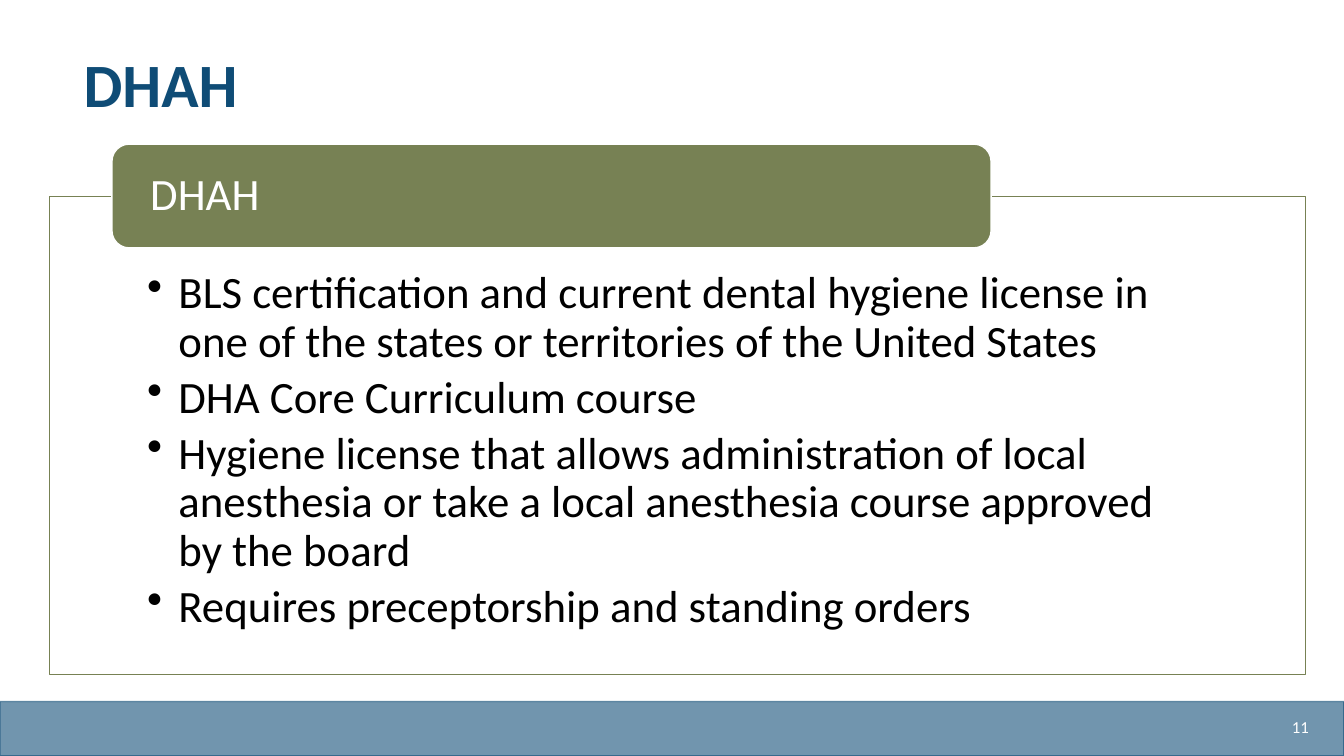
import pptx
import pptx.util
import pptx.dml.color
import pptx.enum.shapes
import pptx.enum.text
import pptx.oxml
import pptx.oxml.ns
from dataclasses import dataclass
from pptx.util import Inches

SHAPES = pptx.enum.shapes.MSO_SHAPE
ALIGN = pptx.enum.text.PP_ALIGN
ANCHOR = pptx.enum.text.MSO_ANCHOR


@dataclass(frozen=True)
class Theme:
    font: str = "Calibri"
    navy: str = "0F4C76"
    olive: str = "778154"
    white: str = "FFFFFF"
    black: str = "000000"
    title_size: int = 44
    body_size: int = 32
    number_size: int = 12
    line_spacing: float = 0.9


class SlideBuilder:
    def __init__(self, page, theme):
        self.page = page
        self.theme = theme

    def color(self, value):
        return pptx.dml.color.RGBColor.from_string(value)

    def set_alpha(self, element, percent):
        for color in element.iter(pptx.oxml.ns.qn("a:srgbClr")):
            color.append(pptx.oxml.parse_xml(
                f'<a:alpha {pptx.oxml.ns.nsdecls("a")} val="{percent * 1000}"/>'))

    def frame(self, box, insets, anchor):
        frame = box.text_frame
        frame.word_wrap = True
        frame.auto_size = pptx.enum.text.MSO_AUTO_SIZE.NONE
        frame.vertical_anchor = anchor
        (frame.margin_left, frame.margin_top,
         frame.margin_right, frame.margin_bottom) = map(Inches, insets)
        return frame

    def add_text(self, para, text, size, color, bold=False, align=ALIGN.LEFT):
        para.alignment = align
        para.line_spacing = self.theme.line_spacing
        span = para.add_run()
        span.text = text
        span.font.name = self.theme.font
        span.font.size = pptx.util.Pt(size)
        span.font.bold = bold
        span.font.color.rgb = self.color(color)

    def title(self, text, place):
        box = self.page.shapes.title
        box.left, box.top, box.width, box.height = map(Inches, place)
        frame = self.frame(box, (0.1, 0.05, 0.1, 0.05), ANCHOR.MIDDLE)
        self.add_text(frame.paragraphs[0], text, self.theme.title_size,
                      self.theme.navy, bold=True)

    def shape(self, kind, place, fill, line, fill_alpha=100, line_alpha=100):
        box = self.page.shapes.add_shape(kind, *map(Inches, place))
        box.shadow.inherit = False
        box.fill.solid()
        box.fill.fore_color.rgb = self.color(fill)
        box.line.color.rgb = self.color(line)
        box.line.width = pptx.util.Pt(1)
        properties = box._element.spPr
        for tag, percent in (("a:solidFill", fill_alpha), ("a:ln", line_alpha)):
            if percent < 100:
                self.set_alpha(properties.find(pptx.oxml.ns.qn(tag)), percent)
        return box

    def label(self, box, text, size, insets, align=ALIGN.LEFT):
        frame = self.frame(box, insets, ANCHOR.MIDDLE)
        self.add_text(frame.paragraphs[0], text, size, self.theme.white, align=align)

    def text_box(self, place):
        return self.page.shapes.add_textbox(*map(Inches, place))

    def bullets(self, box, items, insets, indent):
        frame = self.frame(box, insets, ANCHOR.TOP)
        for index, item in enumerate(items):
            para = frame.add_paragraph() if index else frame.paragraphs[0]
            properties = para._p.get_or_add_pPr()
            properties.set("marL", str(Inches(indent)))
            properties.set("indent", str(-Inches(indent)))
            properties.append(pptx.oxml.parse_xml(
                f'<a:buChar {pptx.oxml.ns.nsdecls("a")} char="•"/>'))
            para.space_after = pptx.util.Pt(5.4)
            self.add_text(para, item, self.theme.body_size, self.theme.black)


def main():
    theme = Theme()
    deck = pptx.Presentation()
    deck.slide_width, deck.slide_height = Inches(13.33), Inches(7.5)
    page = deck.slides.add_slide(deck.slide_layouts[5])
    builder = SlideBuilder(page, theme)

    # Footer band and slide number
    builder.shape(SHAPES.RECTANGLE, (0, 6.96, 13.33, 0.54), theme.navy, theme.navy,
                  fill_alpha=59, line_alpha=59)
    number = builder.text_box((11.65, 7.02, 1.43, 0.4))
    builder.label(number, "11", theme.number_size, (0.1, 0.05, 0.1, 0.05), ALIGN.RIGHT)

    # Title
    builder.title("DHAH", (0.73, 0.48, 10.56, 0.78))

    # Outlined panel with the requirements
    panel = builder.shape(SHAPES.RECTANGLE, (0.49, 1.95, 12.46, 4.74),
                          theme.white, theme.olive, fill_alpha=90)
    builder.bullets(panel, [
        "BLS certification and current dental hygiene license in one of the states "
        "or territories of the United States",
        "DHA Core Curriculum course",
        "Hygiene license that allows administration of local anesthesia or take a "
        "local anesthesia course approved by the board",
        "Requires preceptorship and standing orders",
    ], insets=(0.97, 0.73, 0.97, 0.25), indent=0.31)

    # Heading tab over the panel's top edge
    heading = builder.shape(SHAPES.ROUNDED_RECTANGLE, (1.11, 1.43, 8.72, 1.03),
                            theme.olive, theme.white)
    builder.label(heading, "DHAH", theme.body_size, (0.33, 0, 0.33, 0))

    deck.save("out.pptx")


if __name__ == "__main__":
    main()
